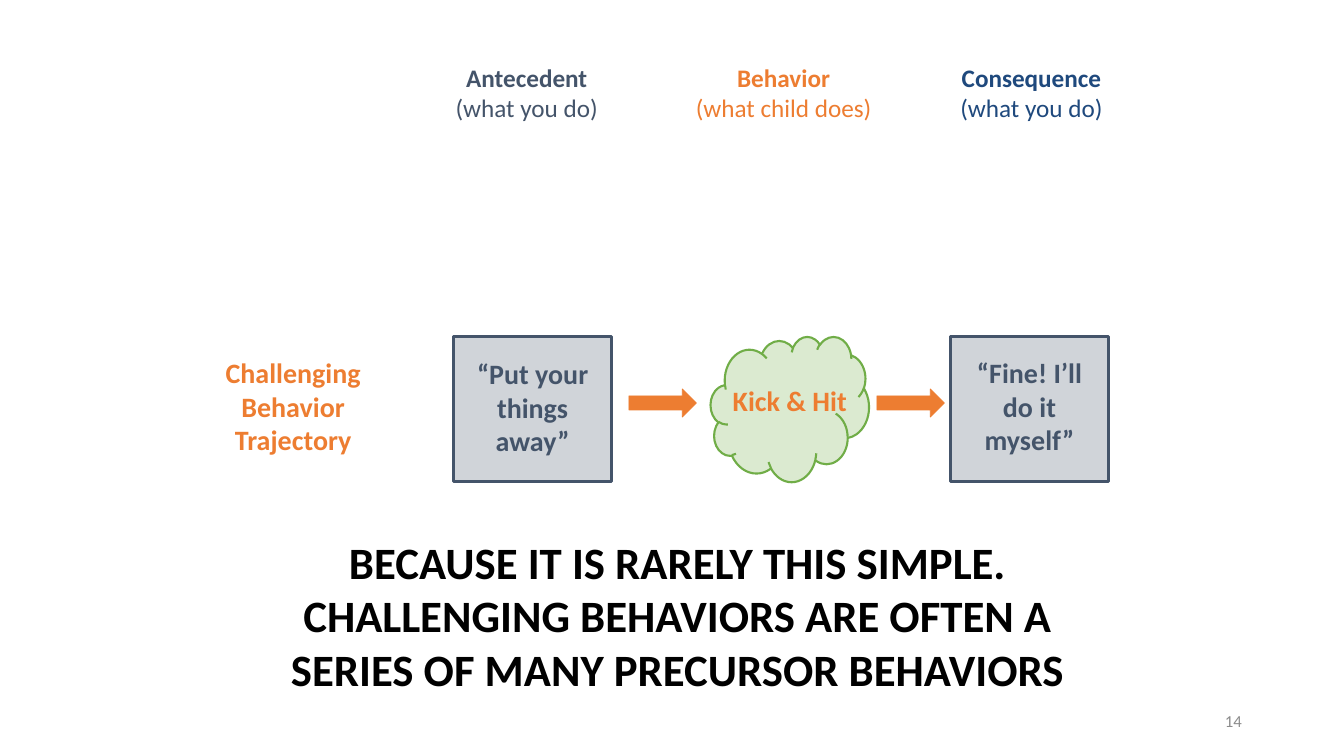
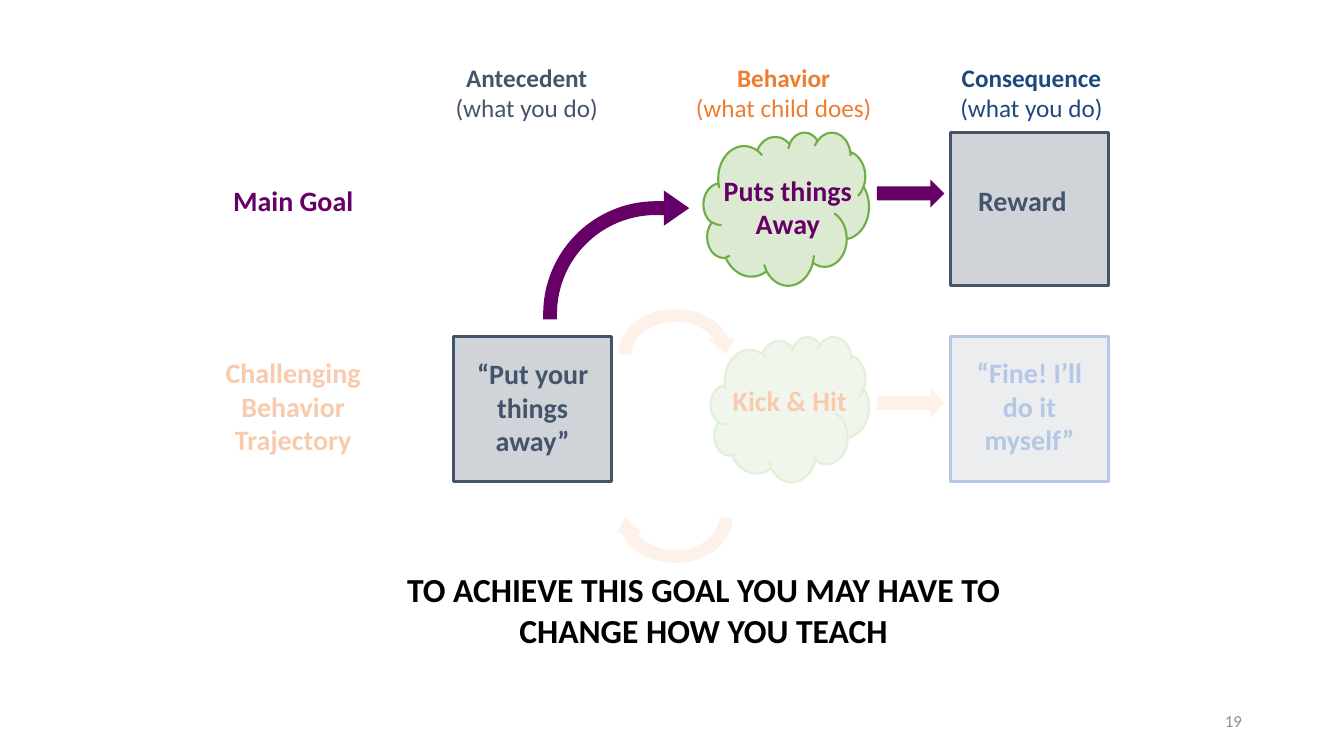
from lxml import etree
from pptx import Presentation
from pptx.dml.color import RGBColor
from pptx.enum import shapes, text
from pptx.oxml import ns
from pptx.util import Cm, Pt

KIND = shapes.MSO_SHAPE
ALIGN = text.PP_ALIGN
FONT = "Calibri"
SLATE, ORANGE, GREEN = "44546A", "ED7D31", "70AD47"
NAVY, PLUM, BLACK, GREY = "1F497D", "660066", "000000", "8C8C8C"
PEACH, SKY, MINT = "F8CBAD", "B4C7E7", "E2F0D9"

LEFT = 5.18  # left edge of the row labels
HEAD_Y, GOAL_Y, PATH_Y = 1.45, 3.33, 8.48
ANTE, BEHAV, CONS = 6.25, 12.73, 18.77  # columns, from the row's left edge
GAP_1, GAP_2 = 10.67, 16.92  # arrows between the columns
CELL, LABEL = 3.99, 4.42
PATH_H, GOAL_H = 3.66, 3.86
ARROW = 1.7, 0.71


def rgb(code):
    return RGBColor.from_string(code)


def draw(slide, kind, box, fill, alpha=100, line=None, width=1.0):
    """Add a preset shape; alpha is the opacity of the fill in percent."""
    shape = slide.shapes.add_shape(kind, *map(Cm, box))
    shape.shadow.inherit = False
    shape.fill.solid()
    shape.fill.fore_color.rgb = rgb(fill)
    if alpha < 100:
        color = shape.fill._xPr.find(".//" + ns.qn("a:srgbClr"))
        etree.SubElement(color, ns.qn("a:alpha"), val=str(alpha * 1000))
    if line:
        shape.line.color.rgb = rgb(line)
        shape.line.width = Pt(width)
    else:
        shape.line.fill.background()
    return shape


def write(slide, box, lines, color, size=20, bold=True, align=ALIGN.CENTER):
    """Add a text box; only its first paragraph can be bold."""
    note = slide.shapes.add_textbox(*map(Cm, box))
    frame = note.text_frame
    frame.word_wrap = True
    frame.text = lines
    for i, para in enumerate(frame.paragraphs):
        para.alignment = align
        for run in para.runs:
            run.font.name = FONT
            run.font.size = Pt(size)
            run.font.bold = bold and i == 0
            run.font.color.rgb = rgb(color)
    return frame


def headings(slide, x, y):
    for dx, width, name, who, color in (
        (5.95, 4.29, "Antecedent", "you do", SLATE),
        (11.94, 5.26, "Behavior", "child does", ORANGE),
        (18.59, 4.45, "Consequence", "you do", NAVY),
    ):
        write(slide, (x + dx, y, width, 1.8), f"{name}\n(what {who})", color, 18)


def path_row(slide, x, y, faded=False):
    """Draw the challenging path, with loops and pale colours when faded."""
    alpha = 10 if faded else 25
    warm, cool, leaf = (PEACH, SKY, MINT) if faded else (ORANGE, SLATE, GREEN)
    for dx, opaque, edge in ((ANTE, 25, SLATE), (CONS, alpha, cool)):
        draw(slide, KIND.RECTANGLE, (x + dx, y, CELL, PATH_H), SLATE, opaque, edge, 2.25)
    draw(slide, KIND.CLOUD, (x + BEHAV, y, CELL, PATH_H), GREEN, alpha, leaf, 1.5)

    if faded:
        for dy, turn in ((-0.86, 0), (3.25, 180)):
            loop = draw(slide, KIND.CIRCULAR_ARROW,
                        (x + 10.24, y + dy, 3.2, 2.62), ORANGE, alpha)
            loop.rotation = turn
        draw(slide, KIND.RIGHT_ARROW, (x + GAP_2, y + 1.32, *ARROW), ORANGE, alpha)
    else:
        for dx in (GAP_1, GAP_2):
            draw(slide, KIND.RIGHT_ARROW, (x + dx, y + 1.32, *ARROW),
                 ORANGE, line=ORANGE, width=0.5)

    for dx, dy, width, words, color in (
        (0, 0.36, LABEL, "Challenging Behavior Trajectory", warm),
        (ANTE, 0.38, CELL, "“Put your things away”", SLATE),
        (BEHAV, 1.05, CELL, "Kick & Hit", warm),
        (CONS, 0.36, CELL, "“Fine! I’ll do it myself”", cool),
    ):
        write(slide, (x + dx, y + dy, width, 2.82), words, color)


def goal_row(slide, x, y):
    draw(slide, KIND.CLOUD, (x + 12.55, y, 4.17, GOAL_H), GREEN, 25, GREEN, 1.5)
    draw(slide, KIND.RECTANGLE, (x + CONS, y, CELL, GOAL_H), SLATE, 25, SLATE, 2.25)
    bend = draw(slide, KIND.BENT_ARROW, (x + 8.51, y + 1.47, 3.68, 3.25), PLUM)
    for i, value in enumerate((0.107, 0.137, 0.197, 0.875)):
        bend.adjustments[i] = value
    draw(slide, KIND.RIGHT_ARROW, (x + GAP_2, y + 1.19, *ARROW), PLUM)

    for dx, dy, width, words, color in (
        (0, 1.17, LABEL, "Main Goal", PLUM),
        (12.45, 0.91, 4.45, "Puts things Away", PLUM),
        (18.59, 1.17, CELL, "Reward", SLATE),
    ):
        write(slide, (x + dx, y + dy, width, 1.12), words, color)


def number(slide, value):
    frame = write(slide, (23.93, 17.65, 7.62, 1.02), str(value), GREY, 12, False, ALIGN.RIGHT)
    frame.vertical_anchor = text.MSO_ANCHOR.MIDDLE


def main():
    deck = Presentation()
    deck.slide_width, deck.slide_height = Cm(33.87), Cm(19.05)
    for page, faded, box, size, words in (
        (14, False, (5.94, 13.34, 22.28, 4.37), 32,
         "BECAUSE IT IS RARELY THIS SIMPLE. CHALLENGING BEHAVIORS ARE OFTEN A "
         "SERIES OF MANY PRECURSOR BEHAVIORS"),
        (19, True, (8.89, 14.22, 17.68, 2.31), 24,
         "TO ACHIEVE THIS GOAL YOU MAY HAVE TO CHANGE HOW YOU TEACH"),
    ):
        slide = deck.slides.add_slide(deck.slide_layouts[6])
        path_row(slide, LEFT, PATH_Y, faded)
        if faded:
            goal_row(slide, LEFT, GOAL_Y)
        headings(slide, LEFT, HEAD_Y)
        write(slide, box, words, BLACK, size)
        number(slide, page)
    deck.save("out.pptx")


if __name__ == "__main__":
    main()
